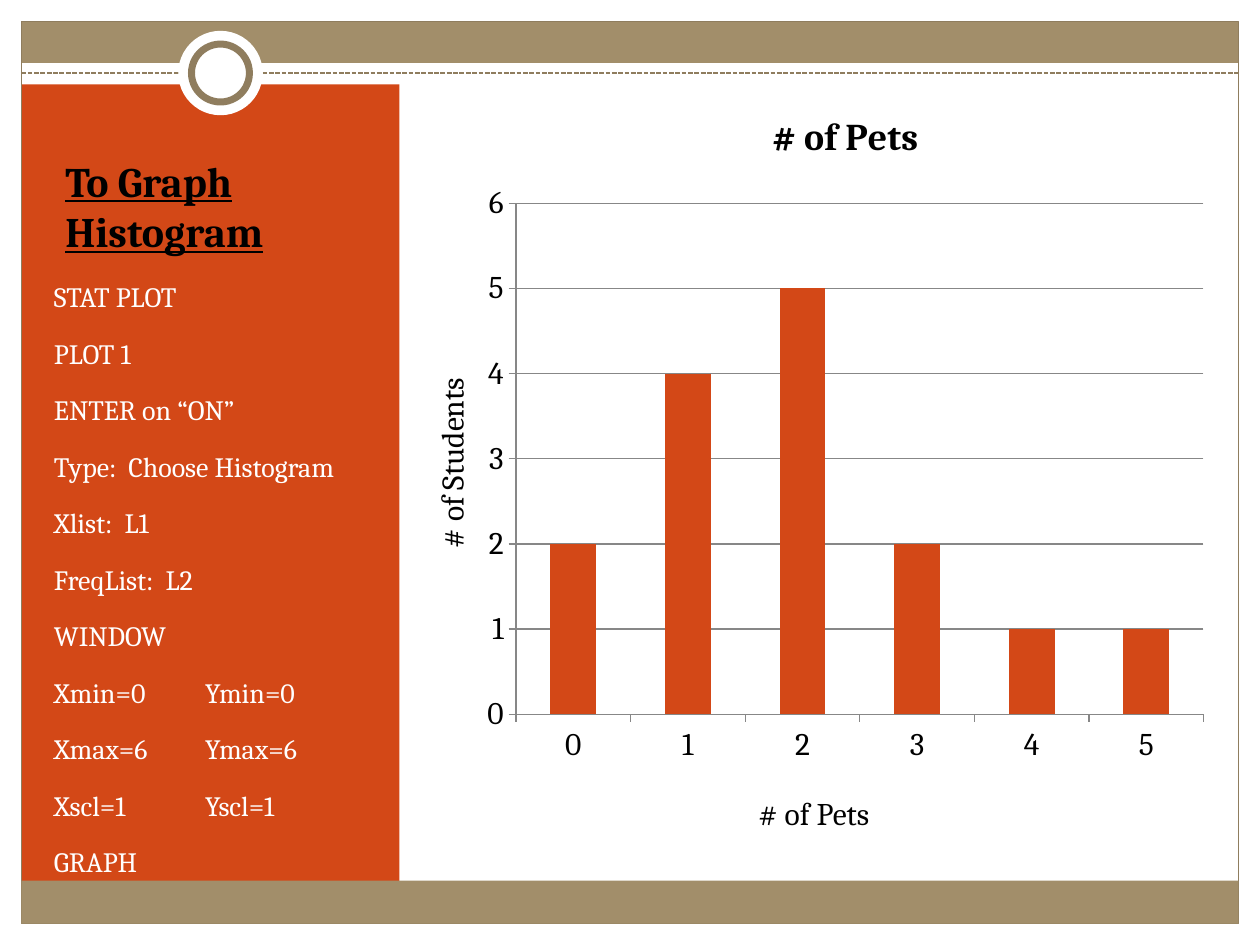
"""Builds a slide pairing histogram instructions with a pet-count column chart."""
from lxml import etree
from pptx import Presentation
from pptx import util as u
from pptx.chart.data import CategoryChartData
from pptx.dml.color import RGBColor
from pptx.enum import chart as charts, dml, shapes, text
from pptx.oxml.ns import qn

TITLE = "To Graph Histogram"
STEPS = [
    "STAT PLOT", "PLOT 1", "ENTER on “ON”", "Type:  Choose Histogram",
    "Xlist:  L1", "FreqList:  L2", "WINDOW", "Xmin=0\tYmin=0",
    "Xmax=6\tYmax=6", "Xscl=1\tYscl=1", "GRAPH",
]
PETS = {"0": 2, "1": 4, "2": 5, "3": 2, "4": 1, "5": 1}
PETS_LABEL, STUDENTS_LABEL = "# of Pets", "# of Students"
COLORS = {"tan": "A28E6A", "brown": "8F7D5E", "orange": "D34817",
          "white": "FFFFFF", "black": "000000", "gray": "878787"}
FONT = "Cambria"
WIDTH, HEIGHT = 10, 7.5
MARGIN = 0.17
INNER_WIDTH, INNER_HEIGHT = WIDTH - 2 * MARGIN, HEIGHT - 2 * MARGIN
BAND = 0.34
FOOTER_TOP = HEIGHT - MARGIN - BAND
PANEL_TOP, PANEL_WIDTH = 0.67, 3
RULE_Y, RING_X = 0.58, 1.75
RECT, OVAL = shapes.MSO_SHAPE.RECTANGLE, shapes.MSO_SHAPE.OVAL
BLOCKS = [
    ((MARGIN, MARGIN, INNER_WIDTH, 0.33), "tan"),
    ((0, HEIGHT - MARGIN, WIDTH, MARGIN), "white"),
    ((WIDTH - MARGIN, 0, MARGIN, HEIGHT), "white"),
    ((0, 0, WIDTH, 0.13), "white"),
    ((0, 0, MARGIN, HEIGHT), "white"),
    ((MARGIN, PANEL_TOP, PANEL_WIDTH, FOOTER_TOP - PANEL_TOP + 0.1), "orange"),
]


def color(name):
    return RGBColor.from_string(COLORS[name])


def inches(box):
    return [u.Inches(length) for length in box]


def style_font(font, size, name="black", bold=False):
    font.name, font.size, font.bold = FONT, u.Pt(size), bold
    font.color.rgb = color(name)


def add_block(slide, kind, box, fill=None, line=None, weight=0.75):
    shape = slide.shapes.add_shape(kind, *inches(box))
    shape.shadow.inherit = False
    if fill:
        shape.fill.solid()
        shape.fill.fore_color.rgb = color(fill)
    else:
        shape.fill.background()
    if line:
        shape.line.color.rgb = color(line)
        shape.line.width = u.Pt(weight)
    else:
        shape.line.fill.background()


def add_circle(slide, diameter, **style):
    box = (RING_X - diameter / 2, RULE_Y - diameter / 2, diameter, diameter)
    add_block(slide, OVAL, box, "white", **style)


def add_rule(slide):
    rule = slide.shapes.add_connector(
        shapes.MSO_CONNECTOR.STRAIGHT,
        *inches((MARGIN, RULE_Y, WIDTH - MARGIN, RULE_Y)))
    rule.line.color.rgb = color("brown")
    rule.line.width = u.Pt(0.9)
    rule.line.dash_style = dml.MSO_LINE.SQUARE_DOT
    etree.SubElement(rule._element.spPr, qn("a:effectLst"))


def add_text(slide, box, lines, size, name="black", bold=False, wrap=True):
    shape = slide.shapes.add_textbox(*inches(box))
    frame = shape.text_frame
    frame.word_wrap = wrap
    for index, line in enumerate(lines):
        paragraph = frame.paragraphs[0] if index == 0 else frame.add_paragraph()
        run = paragraph.add_run()
        run.text = line
        style_font(run.font, size, name, bold)
    return shape


def add_title(slide):
    shape = add_text(slide, (0.42, 1, 2.58, 1.08), [TITLE], 24, bold=True)
    shape.text_frame.vertical_anchor = text.MSO_ANCHOR.BOTTOM
    shape.text_frame.paragraphs[0].runs[0].font.underline = True


def add_steps(slide):
    shape = add_text(slide, (0.33, 2.17, 2.75, 4.83), STEPS, 16, "white")
    for paragraph in shape.text_frame.paragraphs:
        paragraph.space_before, paragraph.space_after = u.Pt(3.1), u.Pt(10)
        if "\t" in paragraph.text:
            stops = etree.SubElement(paragraph._p.get_or_add_pPr(), qn("a:tabLst"))
            etree.SubElement(stops, qn("a:tab"), pos=str(u.Inches(1.2)), algn="l")


def add_pets_chart(slide):
    data = CategoryChartData()
    data.categories = list(PETS)
    data.add_series(PETS_LABEL, list(PETS.values()))
    chart = slide.shapes.add_chart(
        charts.XL_CHART_TYPE.COLUMN_CLUSTERED,
        *inches((3.75, PANEL_TOP, 5.92, 5.5)), data).chart
    style_font(chart.font, 18)
    chart.has_legend = False
    chart.has_title = True
    run = chart.chart_title.text_frame.paragraphs[0].add_run()
    run.text = PETS_LABEL
    style_font(run.font, 21.6, bold=True)
    chart.chart_title.include_in_layout = False
    plot = chart.plots[0]
    plot.gap_width, plot.vary_by_categories = 150, False
    fill = plot.series[0].format.fill
    fill.solid()
    fill.fore_color.rgb = color("orange")
    chart.value_axis.has_major_gridlines = True
    for axis in (chart.category_axis, chart.value_axis):
        axis.major_tick_mark = charts.XL_TICK_MARK.OUTSIDE
        axis.minor_tick_mark = charts.XL_TICK_MARK.NONE
        axis.format.line.color.rgb = color("gray")
    chart.value_axis.major_gridlines.format.line.color.rgb = color("gray")


def main():
    presentation = Presentation()
    presentation.slide_width, presentation.slide_height = inches((WIDTH, HEIGHT))
    slide = presentation.slides.add_slide(presentation.slide_layouts[6])
    for box, fill in BLOCKS:
        add_block(slide, RECT, box, fill)
    add_block(slide, RECT, (MARGIN, MARGIN, INNER_WIDTH, INNER_HEIGHT), line="brown")
    add_rule(slide)
    add_circle(slide, 0.67)
    add_circle(slide, 0.46, line="brown", weight=4)
    add_block(slide, RECT, (MARGIN, FOOTER_TOP, INNER_WIDTH, BAND), "tan")
    add_title(slide)
    add_steps(slide)
    add_pets_chart(slide)
    label = add_text(slide, (2.73, 3.4, 1.7, 0.4), [STUDENTS_LABEL], 18, wrap=False)
    label.rotation = 270
    add_text(slide, (5.92, 6.25, 1.18, 0.4), [PETS_LABEL], 18, wrap=False)
    presentation.save("out.pptx")


if __name__ == "__main__":
    main()
